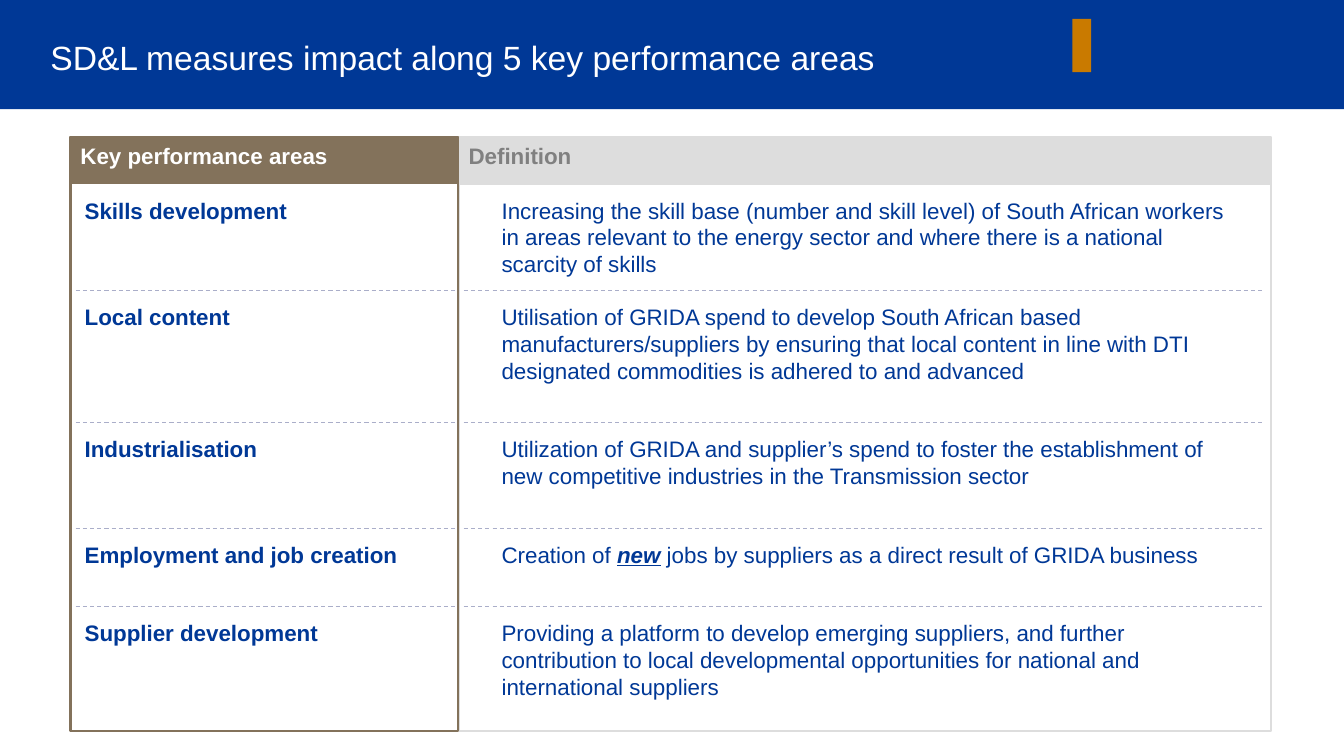
from dataclasses import dataclass

from lxml.etree import SubElement
from pptx import Presentation
from pptx.dml.color import RGBColor
from pptx.enum.dml import MSO_LINE
from pptx.enum.shapes import MSO_CONNECTOR, MSO_SHAPE
from pptx.enum.text import MSO_ANCHOR, MSO_AUTO_SIZE, PP_ALIGN
from pptx.oxml.ns import qn
from pptx.util import Pt


@dataclass(frozen=True)
class Theme:
    font: str = "Arial"
    title_size: int = 24
    body_size: int = 16
    blue: str = "003896"
    orange: str = "C97A00"
    brown: str = "83725B"
    silver: str = "DDDDDD"
    grey: str = "808080"
    dash: str = "AAAEC9"
    white: str = "FFFFFF"


class Deck:
    def __init__(self, theme):
        self.theme = theme
        self.prs = Presentation()
        self.prs.slide_width, self.prs.slide_height = Pt(960), Pt(540)
        self.s = self.prs.slides.add_slide(self.prs.slide_layouts[5])

    def style(self, p, size, color, bold=False):
        for r in p.runs:
            r.font.name, r.font.size = self.theme.font, Pt(size)
            r.font.bold = bold
            r.font.color.rgb = RGBColor.from_string(color)

    def title(self, text, x, y, w, h):
        sp = self.s.shapes.title
        sp.left, sp.top, sp.width, sp.height = Pt(x), Pt(y), Pt(w), Pt(h)
        # Bring the title in front of the banner
        self.s.shapes._spTree.append(sp._element)
        tf = sp.text_frame
        tf.text = text
        tf.word_wrap, tf.auto_size = True, MSO_AUTO_SIZE.NONE
        tf.vertical_anchor = MSO_ANCHOR.MIDDLE
        p = tf.paragraphs[0]
        p.alignment, p.line_spacing = PP_ALIGN.LEFT, 0.9
        self.style(p, self.theme.title_size, self.theme.white)

    def box(self, x, y, w, h, fill, line=None, weight=1.5):
        sp = self.s.shapes.add_shape(MSO_SHAPE.RECTANGLE, Pt(x), Pt(y), Pt(w), Pt(h))
        sp.shadow.inherit = False
        sp.fill.solid()
        sp.fill.fore_color.rgb = RGBColor.from_string(fill)
        if line:
            sp.line.color.rgb = RGBColor.from_string(line)
            sp.line.width = Pt(weight)
        else:
            sp.line.fill.background()
        return sp

    def header(self, text, x, y, w, h, fill, color, weight):
        tf = self.box(x, y, w, h, fill, fill, weight).text_frame
        tf.text = text
        tf.word_wrap, tf.vertical_anchor = True, MSO_ANCHOR.TOP
        p = tf.paragraphs[0]
        p.alignment = PP_ALIGN.LEFT
        self.style(p, self.theme.body_size, color, bold=True)

    def text(self, text, x, y, w, h, bold=False, emphasis=None):
        tf = self.s.shapes.add_textbox(Pt(x), Pt(y), Pt(w), Pt(h)).text_frame
        tf.margin_left = tf.margin_top = tf.margin_right = tf.margin_bottom = 0
        tf.word_wrap = True
        p = tf.paragraphs[0]
        if emphasis:
            before, after = text.split(emphasis)
            for part in (before, emphasis, after):
                p.add_run().text = part
        else:
            p.text = text
        self.style(p, self.theme.body_size, self.theme.blue, bold)
        if emphasis:
            font = p.runs[1].font
            font.bold = font.italic = font.underline = True

    def divider(self, x1, x2, y):
        c = self.s.shapes.add_connector(MSO_CONNECTOR.STRAIGHT, Pt(x1), Pt(y), Pt(x2), Pt(y))
        c.line.color.rgb = RGBColor.from_string(self.theme.dash)
        c.line.width, c.line.dash_style = Pt(0.75), MSO_LINE.DASH
        SubElement(c._element.spPr, qn("a:effectLst"))


# Row top, definition height, area, definition, emphasised word
ROWS = [
    (131.5, 58, "Skills development",
     "Increasing the skill base (number and skill level) of South African workers in areas "
     "relevant to the energy sector and where there is a national scarcity of skills", None),
    (207.4, 77, "Local content",
     "Utilisation of GRIDA spend to develop South African based manufacturers/suppliers by "
     "ensuring that local content in line with DTI designated commodities is adhered to "
     "and advanced", None),
    (301.7, 58, "Industrialisation",
     "Utilization of GRIDA and supplier’s spend to foster the establishment of new "
     "competitive industries in the Transmission sector", None),
    (377.3, 38, "Employment and job creation",
     "Creation of new jobs by suppliers as a direct result of GRIDA business", "new"),
    (433.4, 62, "Supplier development",
     "Providing a platform to develop emerging suppliers, and further contribution to local "
     "developmental opportunities for national and international suppliers", None),
]
TOP, PANEL_H, HEADER_H, ROW_PAD = 98, 424, 33, 9


def main():
    t = Theme()
    deck = Deck(t)

    # Banner, accent and title
    deck.box(0, 0, 960, 78, t.blue)
    deck.box(766, 13.5, 13.5, 38, t.orange)
    deck.title("SD&L measures impact along 5 key performance areas", 28.8, 16.5, 749, 52.5)

    # Column panels with their headers
    for text, x, w, fill, color, weight in [
        ("Definition", 327.6, 580, t.silver, t.grey, 2.25),
        ("Key performance areas", 50.4, 276.5, t.brown, t.white, 1.5),
    ]:
        deck.box(x, TOP, w, PANEL_H, t.white, fill)
        deck.header(text, x, TOP, w, HEADER_H, fill, color, weight)

    # Performance areas and definitions
    for y, h, area, definition, emphasis in ROWS:
        deck.text(definition, 358.3, y + ROW_PAD, 529, h, emphasis=emphasis)
        deck.text(area, 60.5, y + ROW_PAD, 233, 20, bold=True)

    # Dashed dividers above every row but the first
    for y, *_ in ROWS[1:]:
        deck.divider(54, 326.2, y)
        deck.divider(331.2, 903.6, y)

    deck.prs.save("out.pptx")


if __name__ == "__main__":
    main()
